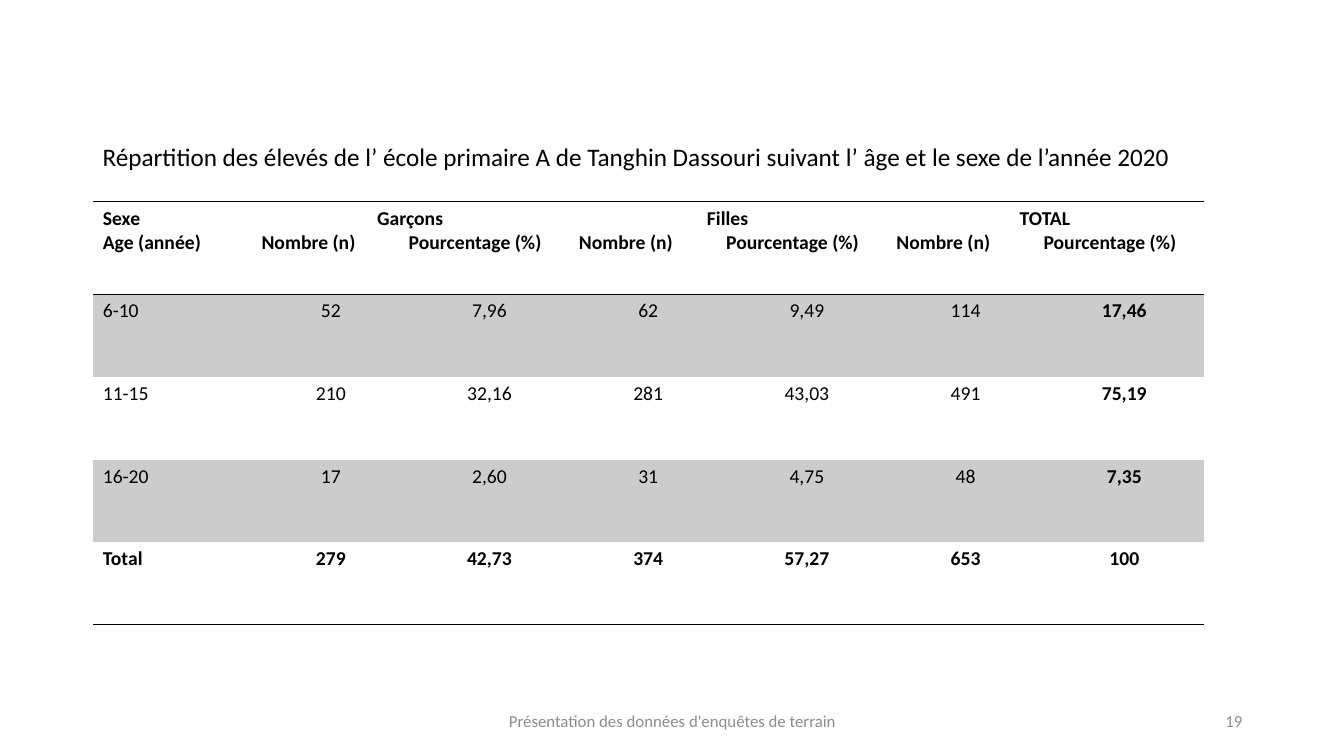
import pptx
import pptx.util
import pptx.dml.color
import pptx.enum.text
import pptx.oxml
import pptx.oxml.ns

Inches = pptx.util.Inches
Pt = pptx.util.Pt
ALIGN = pptx.enum.text.PP_ALIGN
MIDDLE = pptx.enum.text.MSO_ANCHOR.MIDDLE
BLACK, GREY, BAND = "000000", "8C8C8C", "CCCCCC"
PLAIN_STYLE = "{2D5ABB26-0587-4C30-8999-92F81FD0307C}"
NS = pptx.oxml.ns.nsdecls("a")

GROUPS = ["Garçons", "Filles", "TOTAL"]
ROWS = [
    ["6-10", "52", "7,96", "62", "9,49", "114", "17,46"],
    ["11-15", "210", "32,16", "281", "43,03", "491", "75,19"],
    ["16-20", "17", "2,60", "31", "4,75", "48", "7,35"],
    ["Total", "279", "42,73", "374", "57,27", "653", "100"],
]


def rgb(code):
    return pptx.dml.color.RGBColor.from_string(code)


def write(frame, text, size, color=BLACK, align=ALIGN.LEFT, bold=False):
    frame.text = text
    for para in frame.paragraphs:
        para.alignment = align
        for run in para.runs:
            run.font.name = "Calibri"
            run.font.size = Pt(size)
            run.font.bold = bold
            run.font.color.rgb = rgb(color)


def add_text(slide, box, text, size, color, align):
    frame = slide.shapes.add_textbox(*map(Inches, box)).text_frame
    frame.word_wrap = True
    frame.vertical_anchor = MIDDLE
    write(frame, text, size, color, align)
    return frame


def rule(cell, side):
    """Draw a 1 pt black border on side T or B of the cell."""
    cell._tc.get_or_add_tcPr().append(pptx.oxml.parse_xml(
        f'<a:ln{side} {NS} w="12700"><a:solidFill><a:srgbClr val="{BLACK}"/>'
        f'</a:solidFill></a:ln{side}>'))


def add_tab(para, inches):
    para._p.get_or_add_pPr().append(pptx.oxml.parse_xml(
        f'<a:tabLst {NS}><a:tab pos="{Inches(inches)}" algn="l"/></a:tabLst>'))


def fill_head(table):
    write(table.cell(0, 0).text_frame, "Sexe\nAge (année)", 14, bold=True)
    for i, group in enumerate(GROUPS):
        col = 1 + 2 * i
        cell = table.cell(0, col)
        cell.merge(table.cell(0, col + 1))
        write(cell.text_frame, f"{group}\nNombre (n)\tPourcentage (%)", 14, bold=True)
        title, units = cell.text_frame.paragraphs
        title.alignment = ALIGN.CENTER
        add_tab(units, 1.46)
    for cell in table.rows[0].cells:
        rule(cell, "T")
        rule(cell, "B")
        cell.fill.background()


def fill_body(table):
    last = len(ROWS)
    for r, values in enumerate(ROWS, 1):
        for c, value in enumerate(values):
            cell = table.cell(r, c)
            align = ALIGN.CENTER if c else ALIGN.LEFT
            bold = r == last or c == len(values) - 1
            write(cell.text_frame, value, 14, align=align, bold=bold)
            if r == last:
                rule(cell, "B")
            if r % 2:
                cell.fill.solid()
                cell.fill.fore_color.rgb = rgb(BAND)
            else:
                cell.fill.background()


def add_counts(slide):
    box = map(Inches, (0.92, 2, 11.02, 4.21))
    table = slide.shapes.add_table(len(ROWS) + 1, len(ROWS[0]), *box).table
    table.first_row = table.horz_banding = False
    table._tbl.tblPr.find(pptx.oxml.ns.qn("a:tableStyleId")).text = PLAIN_STYLE
    for col in table.columns:
        col.width = Inches(11.02 / len(ROWS[0]))
    for i, row in enumerate(table.rows):
        row.height = Inches(0.82 if i else 0.92)
    fill_head(table)
    fill_body(table)


def main():
    deck = pptx.Presentation()
    deck.slide_width, deck.slide_height = Inches(13.33), Inches(7.5)
    slide = deck.slides.add_slide(deck.slide_layouts[6])
    add_counts(slide)
    title = add_text(
        slide, (0.92, 1.29, 11.5, 0.56),
        "Répartition des élevés de l’ école primaire A de Tanghin Dassouri "
        "suivant l’ âge et le sexe de l’année 2020", 18, BLACK, ALIGN.LEFT)
    title.paragraphs[0].line_spacing = 0.9
    add_text(slide, (4.42, 6.95, 4.5, 0.4),
             "Présentation des données d'enquêtes de terrain", 12, GREY, ALIGN.CENTER)
    add_text(slide, (9.42, 6.95, 3, 0.4), "19", 12, GREY, ALIGN.RIGHT)
    deck.save("out.pptx")


if __name__ == "__main__":
    main()
